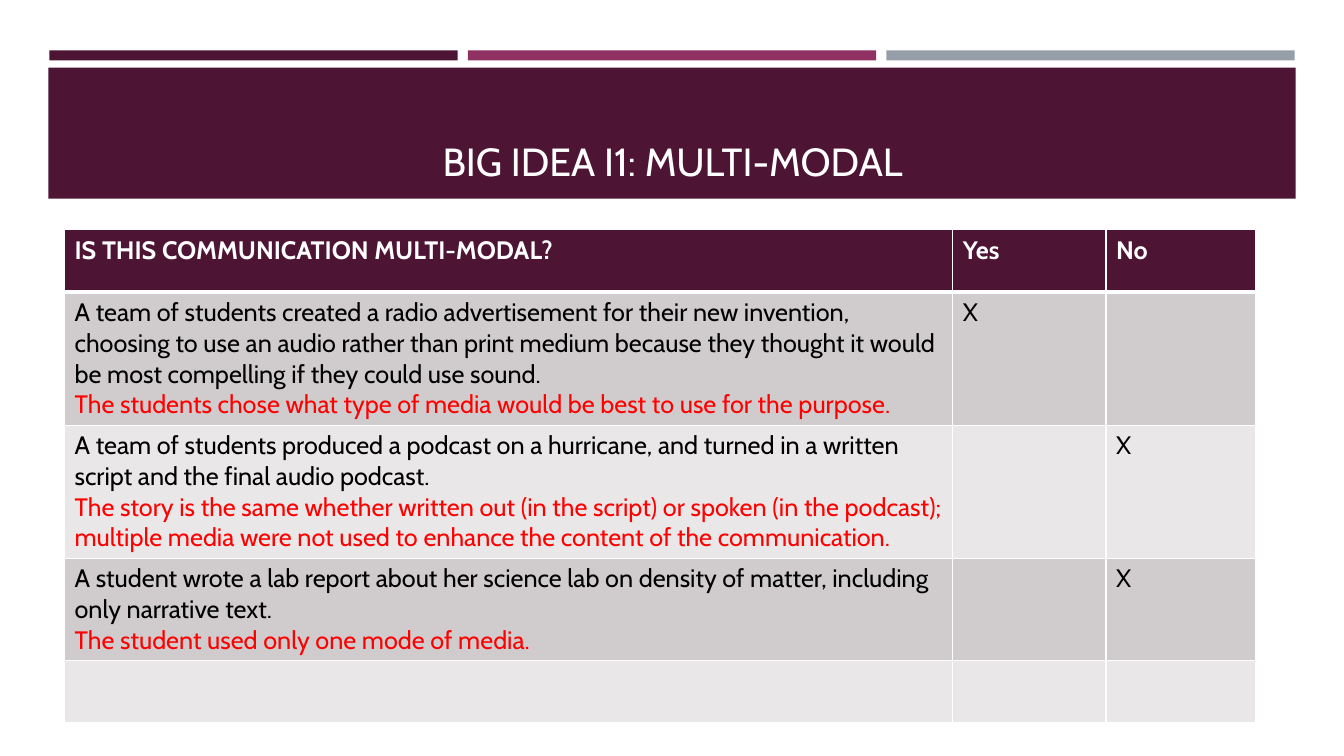
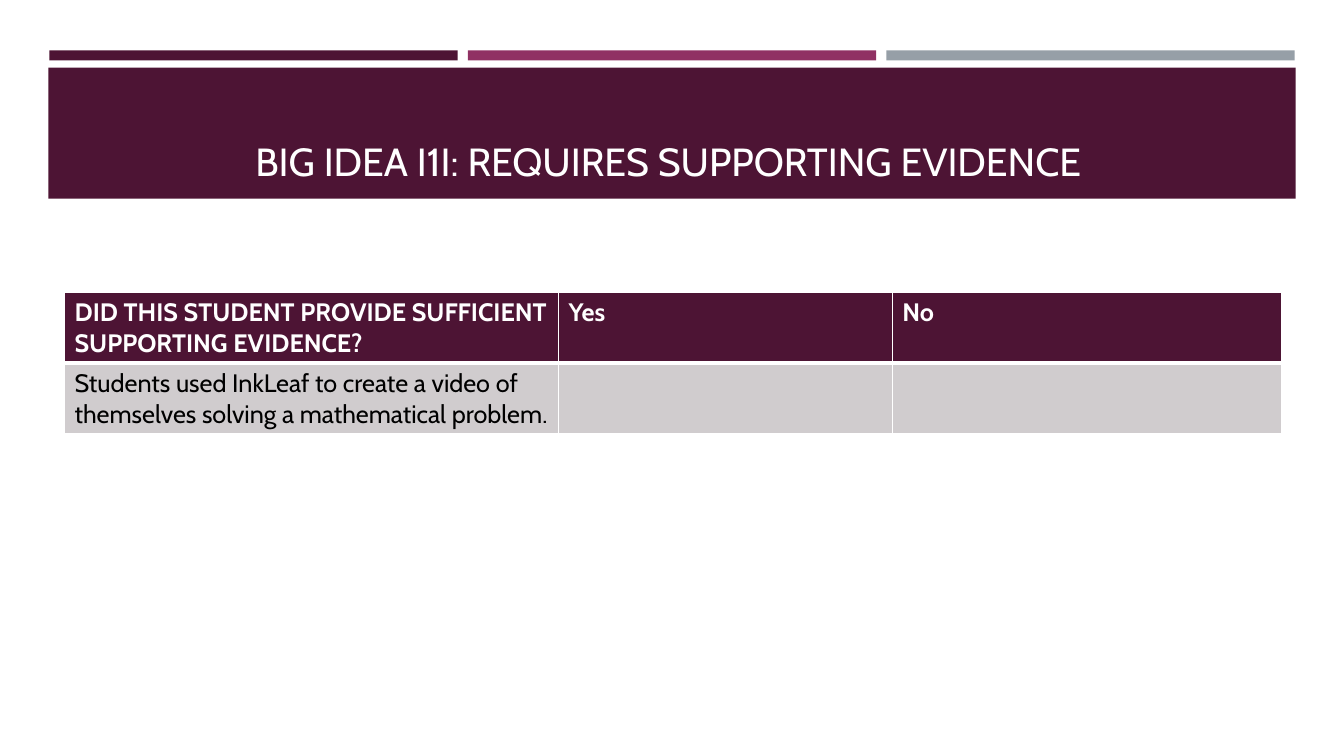
from lxml import etree
from pptx import Presentation
from pptx.dml.color import RGBColor
from pptx.enum.shapes import MSO_SHAPE
from pptx.enum.text import MSO_ANCHOR, PP_ALIGN
from pptx.oxml.ns import qn
from pptx.util import Inches, Pt

RECTANGLE = MSO_SHAPE.RECTANGLE
BOTTOM = MSO_ANCHOR.BOTTOM
CENTER = PP_ALIGN.CENTER

FONT = "Cabin"
PLUM, MAGENTA, GREY = "4D1434", "903163", "969FA7"
WHITE, BLACK, RED = "FFFFFF", "000000", "FF0000"
ROW_SHADES = ["D0CCCE", "E9E7E8"]

BAR_LEFT, BAR_WIDTH, BAR_GAP = 0.49, 4.05, 0.1
TABLE_LEFT = 0.64

# A cell is a list of paragraphs; in body rows the second one is the verdict.
SLIDES = [
    {
        "title": "BIG IDEA I1: MULTI-MODAL",
        "top": 2.28,
        "columns": [8.81, 1.52, 1.48],
        "heights": [0.62, 1.32, 1.32, 1.01, 0.62],
        "rows": [
            [["IS THIS COMMUNICATION MULTI-MODAL?"], ["Yes"], ["No"]],
            [["A team of students created a radio advertisement for their new "
              "invention, choosing to use an audio rather than print medium because "
              "they thought it would be most compelling if they could use sound.",
              "The students chose what type of media would be best to use for the "
              "purpose."], ["X"], []],
            [["A team of students produced a podcast on a hurricane, and turned in "
              "a written script and the final audio podcast.",
              "The story is the same whether written out (in the script) or spoken "
              "(in the podcast); multiple media were not used to enhance the content "
              "of the communication."], [], ["X"]],
            [["A student wrote a lab report about her science lab on density of "
              "matter, including only narrative text.",
              "The student used only one mode of media."], [], ["X"]],
            [[], [], []],
        ],
    },
    {
        "title": "BIG IDEA I1I: REQUIRES SUPPORTING EVIDENCE ",
        "top": 2.9,
        "columns": [4.9, 3.31, 3.86],
        "heights": [0.7, 0.7],
        "rows": [
            [["DID THIS STUDENT PROVIDE SUFFICIENT SUPPORTING EVIDENCE?"],
             ["Yes"], ["No"]],
            [["Students used InkLeaf to create a video of themselves solving a "
              "mathematical problem."], [], []],
        ],
    },
]


def paint(color_format_owner, hex_color):
    """Give a fill a solid colour, or a font its colour."""
    if hasattr(color_format_owner, "solid"):
        color_format_owner.solid()
        color_format_owner.fore_color.rgb = RGBColor.from_string(hex_color)
    else:
        color_format_owner.color.rgb = RGBColor.from_string(hex_color)


def add_borders(cell, top, bottom):
    """Draw white cell borders, 1 pt at the sides; must precede the cell fill."""
    properties = cell._tc.get_or_add_tcPr()
    for side, width in (("L", 1), ("R", 1), ("T", top), ("B", bottom)):
        line = etree.SubElement(properties, qn(f"a:ln{side}"), w=str(Pt(width)))
        line_fill = etree.SubElement(line, qn("a:solidFill"))
        etree.SubElement(line_fill, qn("a:srgbClr"), val=WHITE)


prs = Presentation()
prs.slide_width, prs.slide_height = Inches(13.33), Inches(7.5)

bands = [(BAR_LEFT + i * (BAR_WIDTH + BAR_GAP), 0.5, BAR_WIDTH, 0.1, color)
         for i, color in enumerate([PLUM, MAGENTA, GREY])]
bands.append((0.48, 0.67, 12.37, 1.3, PLUM))

for content in SLIDES:
    slide = prs.slides.add_slide(prs.slide_layouts[6])

    for left, top, width, height, color in bands:
        band = slide.shapes.add_shape(
            RECTANGLE, Inches(left), Inches(top), Inches(width), Inches(height))
        band.shadow.inherit = False
        band.line.fill.background()
        paint(band.fill, color)

    title = slide.shapes.add_textbox(
        Inches(0.64), Inches(0.77), Inches(12.06), Inches(1.11)).text_frame
    title.word_wrap = True
    title.vertical_anchor = BOTTOM
    title.text = content["title"]
    title.paragraphs[0].alignment = CENTER
    title_font = title.paragraphs[0].runs[0].font
    title_font.name, title_font.size = FONT, Pt(28)
    paint(title_font, WHITE)

    rows, columns, heights = content["rows"], content["columns"], content["heights"]
    table = slide.shapes.add_table(
        len(rows), len(columns), Inches(TABLE_LEFT), Inches(content["top"]),
        Inches(sum(columns)), Inches(sum(heights))).table
    for column, width in zip(table.columns, columns):
        column.width = Inches(width)

    for r, row in enumerate(rows):
        is_header = r == 0
        table.rows[r].height = Inches(heights[r])
        for c, paragraphs in enumerate(row):
            cell = table.cell(r, c)
            add_borders(cell, top=3 if r == 1 else 1, bottom=3 if is_header else 1)
            paint(cell.fill, PLUM if is_header else ROW_SHADES[(r - 1) % 2])
            cell.text_frame.text = "\n".join(paragraphs)
            for p, paragraph in enumerate(cell.text_frame.paragraphs):
                for run in paragraph.runs:
                    run.font.name, run.font.size = FONT, Pt(18)
                    run.font.bold = is_header
                    paint(run.font, WHITE if is_header else [BLACK, RED][p])

prs.save("out.pptx")
